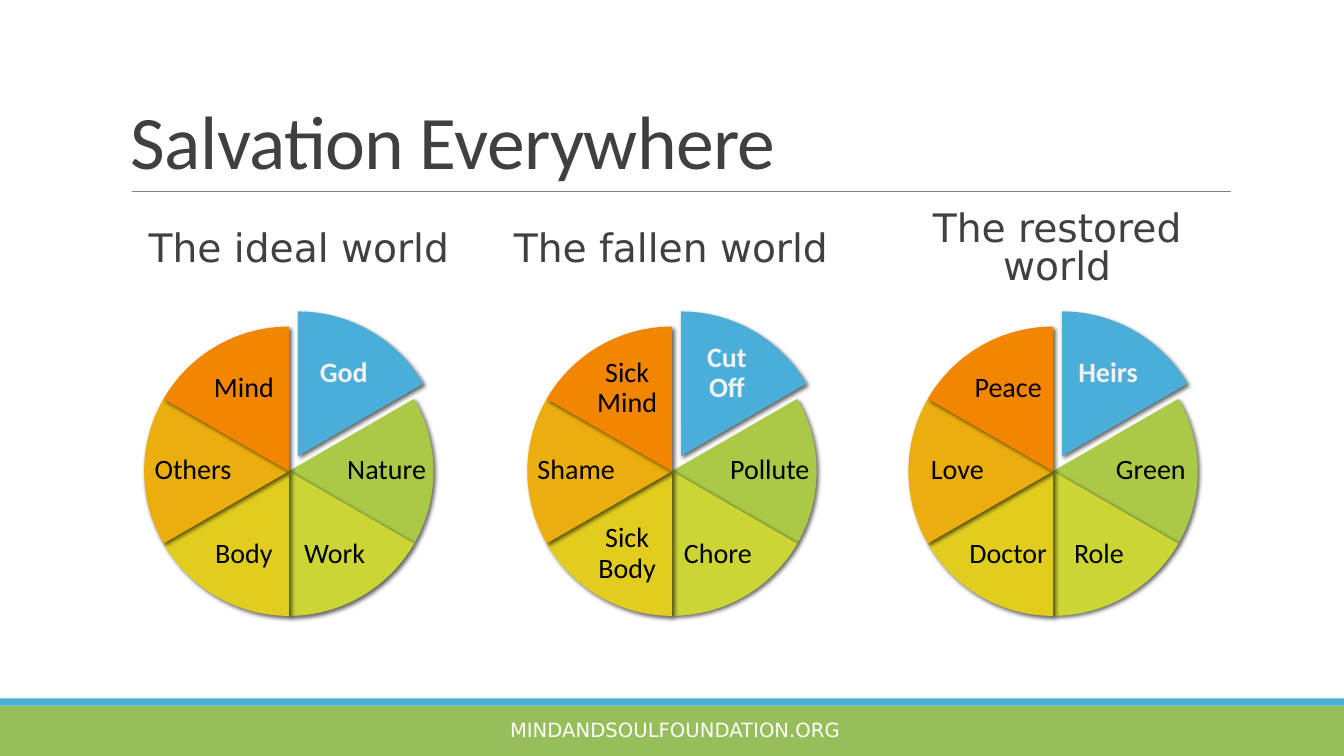
import pptx
import pptx.dml.color
import pptx.enum.shapes
import pptx.enum.text
import pptx.oxml
import pptx.oxml.ns
import pptx.util

Inches = pptx.util.Inches
SHAPE = pptx.enum.shapes.MSO_SHAPE
ALIGN = pptx.enum.text.PP_ALIGN
ANCHOR = pptx.enum.text.MSO_ANCHOR

FILLS = ["4AAED8", "ABC947", "CBD533", "E2CD1F", "EBAE0E", "F28600"]
SPOTS = [
    (1.56, 0.16, 0.84, 0.61),
    (1.97, 1.14, 0.87, 0.58),
    (1.47, 1.95, 0.84, 0.61),
    (0.57, 1.95, 0.84, 0.61),
    (0.05, 1.14, 0.87, 0.58),
    (0.57, 0.31, 0.84, 0.61),
]
WORLDS = [
    ((1.2, 2.02, 3.43, 0.92), "The ideal world", 0.9, 1.43,
     ["God", "Nature", "Work", "Body", "Others", "Mind"]),
    ((4.89, 2.02, 3.43, 0.92), "The fallen world", 0.9, 5.23,
     ["Cut Off", "Pollute", "Chore", "Sick Body", "Shame", "Sick Mind"]),
    ((8.69, 2.02, 3.49, 0.92), "The restored world", 0.8, 9.01,
     ["Heirs", "Green", "Role", "Doctor", "Love", "Peace"]),
]
SHADOW = (
    '<a:effectLst %s><a:outerShdw blurRad="38100" dist="25400" dir="2700000" '
    'algn="ctr" rotWithShape="0"><a:srgbClr val="000000"><a:alpha val="60000"/>'
    "</a:srgbClr></a:outerShdw></a:effectLst>" % pptx.oxml.ns.nsdecls("a")
)


def paint(target, color):
    """Give a fill, a line fill or a font a solid colour."""
    if hasattr(target, "solid"):
        target.solid()
        target = target.fore_color
    else:
        target = target.color
    target.rgb = pptx.dml.color.RGBColor.from_string(color)


def solid(shapes, kind, box, color):
    """Add a flat shape with no outline and no shadow."""
    shape = shapes.add_shape(kind, *map(Inches, box))
    shape.shadow.inherit = False
    paint(shape.fill, color)
    shape.line.fill.background()
    return shape


def write(shapes, box, text, size, face, color, inset=(0.1, 0.05, 0.1, 0.05),
          align=ALIGN.CENTER, anchor=ANCHOR.MIDDLE, space=1.0, bold=False):
    """Add a one-paragraph text box and return its paragraph."""
    frame = shapes.add_textbox(*map(Inches, box)).text_frame
    frame.word_wrap = True
    frame.vertical_anchor = anchor
    (frame.margin_left, frame.margin_top,
     frame.margin_right, frame.margin_bottom) = map(Inches, inset)
    para = frame.paragraphs[0]
    para.text = text
    para.alignment = align
    para.line_spacing = space
    para.font.size = pptx.util.Pt(size)
    para.font.name = face
    para.font.bold = bold
    paint(para.font, color)
    return para


def footer(slide, left, top, width):
    """Draw the two bands and the web address at the foot."""
    solid(slide.shapes, SHAPE.RECTANGLE, (left, top + 0.07, width, 0.5), "96BE5A")
    solid(slide.shapes, SHAPE.RECTANGLE, (left, top, width, 0.07), "4AAED8")
    write(slide.shapes, (left + 4.49, top + 0.14, 4.41, 0.34),
          "MINDANDSOULFOUNDATION.ORG", 14, "DejaVu Sans", "FFFFFF")


def header(slide, left, top, width, height):
    """Draw the title and the rule below it."""
    para = write(slide.shapes, (left, top, width, height), "Salvation Everywhere",
                 54, "Calibri", "404040", align=ALIGN.LEFT, anchor=ANCHOR.BOTTOM,
                 space=0.85)
    para.runs[0]._r.get_or_add_rPr().set("spc", "-50")
    level = Inches(top + height + 0.02)
    rule = slide.shapes.add_connector(
        pptx.enum.shapes.MSO_CONNECTOR.STRAIGHT,
        Inches(left + 0.11), level, Inches(left + width + 0.01), level)
    paint(rule.line, "808080")
    rule.line.width = pptx.util.Pt(0.5)
    rule._element.spPr.append(
        pptx.oxml.parse_xml("<a:effectLst %s/>" % pptx.oxml.ns.nsdecls("a")))


def wheel(slide, left, top, size, labels):
    """Draw a wheel of six slices with the first pulled out."""
    shapes = slide.shapes.add_group_shape().shapes
    for i, (color, spot, label) in enumerate(zip(FILLS, SPOTS, labels)):
        first = i == 0
        dx, dy = (0.09, -0.15) if first else (0, 0)
        slice = solid(shapes, SHAPE.PIE, (left + dx, top + dy, size, size), color)
        slice.adjustments[0] = (162 + 36 * i) % 216
        slice.adjustments[1] = (198 + 36 * i) % 216
        props = slice._element.spPr
        props.remove(props.find(pptx.oxml.ns.qn("a:effectLst")))
        props.append(pptx.oxml.parse_xml(SHADOW))
        x, y, w, h = spot
        write(shapes, (left + x, top + y, w, h), label, 20, "Calibri",
              "F2F2F2" if first else "000000", inset=(0.03,) * 4,
              space=0.9, bold=first)


def main():
    """Build the slide and save it."""
    deck = pptx.Presentation()
    deck.slide_width, deck.slide_height = Inches(13.33), Inches(7.5)
    slide = deck.slides.add_slide(deck.slide_layouts[6])
    footer(slide, 0, 6.93, 13.33)
    header(slide, 1.2, 0.29, 11, 1.59)
    for box, name, space, left, labels in WORLDS:
        wheel(slide, left, 3.24, 2.87, labels)
        write(slide.shapes, box, name, 28, "DejaVu Sans", "404040",
              inset=(0.1, 0.05, 0, 0.05), space=space)
    deck.save("out.pptx")


if __name__ == "__main__":
    main()
